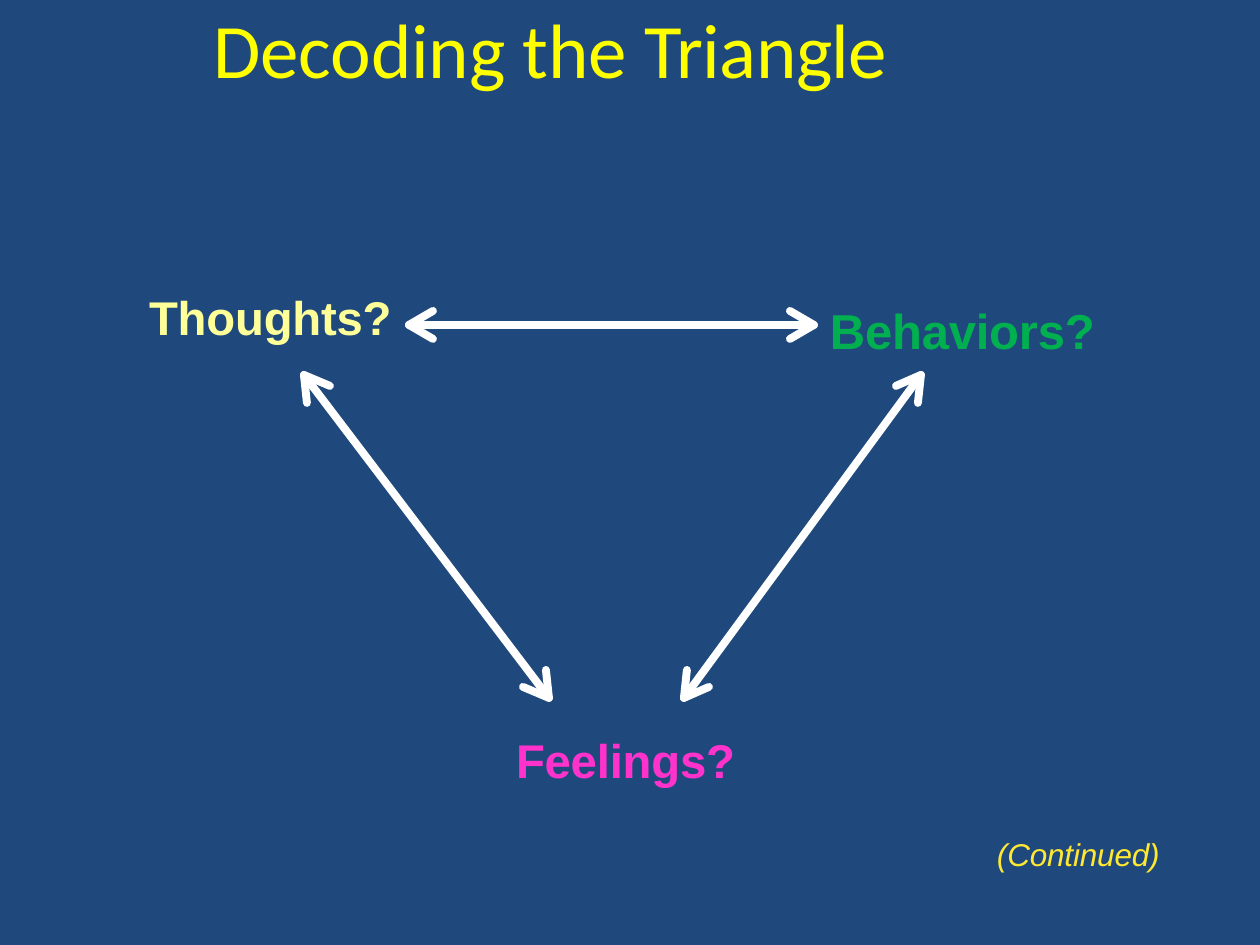
"""Build the "Decoding the Triangle" slide: three questions joined by two-way arrows."""
from math import hypot
from lxml.etree import SubElement
from pptx import Presentation
from pptx.dml.color import RGBColor
from pptx.enum.shapes import MSO_CONNECTOR
from pptx.enum.text import MSO_ANCHOR, MSO_AUTO_SIZE, PP_ALIGN
from pptx.oxml.ns import qn
from pptx.util import Emu, Pt

PX = 914400 // 126
HEAD_LENGTH, HEAD_HALF_WIDTH = 24, 14
COLORS = {
    "background": "1F497D",
    "title": "FFFF00",
    "thoughts": "FFFF99",
    "feelings": "FF33CC",
    "behaviors": "00B050",
    "continued": "FFE831",
    "arrow": "FFFFFF",
}

TITLE = ([("Decoding the ", -10), ("Triangle", -30)], (105, 20, 891, 79))
LABELS = [
    ("Thoughts?", (149, 287, 247, 60), "thoughts", {"size": 27, "bold": True}),
    ("Feelings?", (516, 730, 224, 60), "feelings", {"size": 27, "bold": True}),
    ("Behaviors?", (830, 300, 271, 62), "behaviors", {"size": 28, "bold": True}),
    ("(Continued)", (997, 834, 168, 42), "continued", {"size": 18, "italic": True}),
]
ARROWS = [
    ((409, 325), (814, 325)),
    ((684, 698), (921, 375)),
    ((549, 698), (304, 375)),
]


def px(*lengths):
    return [Emu(length * PX) for length in lengths]


def rgb(name):
    return RGBColor.from_string(COLORS[name])


def write(shape, pieces, color, size, font="Arial", bold=False, italic=False,
          align=PP_ALIGN.LEFT, top=1, before=1, line=None):
    frame = shape.text_frame
    frame.word_wrap = True
    frame.auto_size = MSO_AUTO_SIZE.NONE
    frame.vertical_anchor = MSO_ANCHOR.TOP
    frame.margin_left = frame.margin_right = frame.margin_bottom = 0
    frame.margin_top = px(top)[0]
    paragraph = frame.paragraphs[0]
    paragraph.alignment = align
    paragraph.space_before = Pt(before)
    if line:
        paragraph.line_spacing = Pt(line)
    for text, spacing in pieces:
        run = paragraph.add_run()
        run.text = text
        run.font.name = font
        run.font.size = Pt(size)
        run.font.bold = bold
        run.font.italic = italic
        run.font.color.rgb = rgb(color)
        run.font._element.set("spc", str(spacing))


def stroke(shape):
    shape.line.color.rgb = rgb("arrow")
    shape.line.width = Pt(4.5)
    outline = shape.line._get_or_add_ln()
    outline.set("cap", "rnd")
    SubElement(outline, qn("a:round"))


def add_head(slide, tip, tail):
    dx, dy = tip[0] - tail[0], tip[1] - tail[1]
    reach = hypot(dx, dy)
    ux, uy = dx / reach, dy / reach
    barbs = [
        (round(tip[0] - HEAD_LENGTH * ux - side * uy),
         round(tip[1] - HEAD_LENGTH * uy + side * ux))
        for side in (HEAD_HALF_WIDTH, -HEAD_HALF_WIDTH)
    ]
    builder = slide.shapes.build_freeform(*barbs[0], scale=PX)
    builder.add_line_segments([tip, barbs[1]], close=False)
    head = builder.convert_to_shape()
    head.fill.background()
    head.shadow.inherit = False
    stroke(head)


def add_arrow(slide, start, end):
    shaft = slide.shapes.add_connector(MSO_CONNECTOR.STRAIGHT, *px(*start, *end))
    stroke(shaft)
    SubElement(shaft._element.spPr, qn("a:effectLst"))
    add_head(slide, end, start)
    add_head(slide, start, end)


def main():
    deck = Presentation()
    deck.slide_width, deck.slide_height = px(1260, 945)
    slide = deck.slides.add_slide(deck.slide_layouts[5])
    slide.background.fill.solid()
    slide.background.fill.fore_color.rgb = rgb("background")

    heading, place = TITLE
    title = slide.shapes.title
    title.left, title.top, title.width, title.height = px(*place)
    write(title, heading, "title", 44, font="Calibri", align=PP_ALIGN.CENTER,
          top=10, before=5.6, line=36.7)

    for text, place, color, style in LABELS:
        write(slide.shapes.add_textbox(*px(*place)), [(text, -10)], color, **style)
    for start, end in ARROWS:
        add_arrow(slide, start, end)
    deck.save("out.pptx")


if __name__ == "__main__":
    main()
